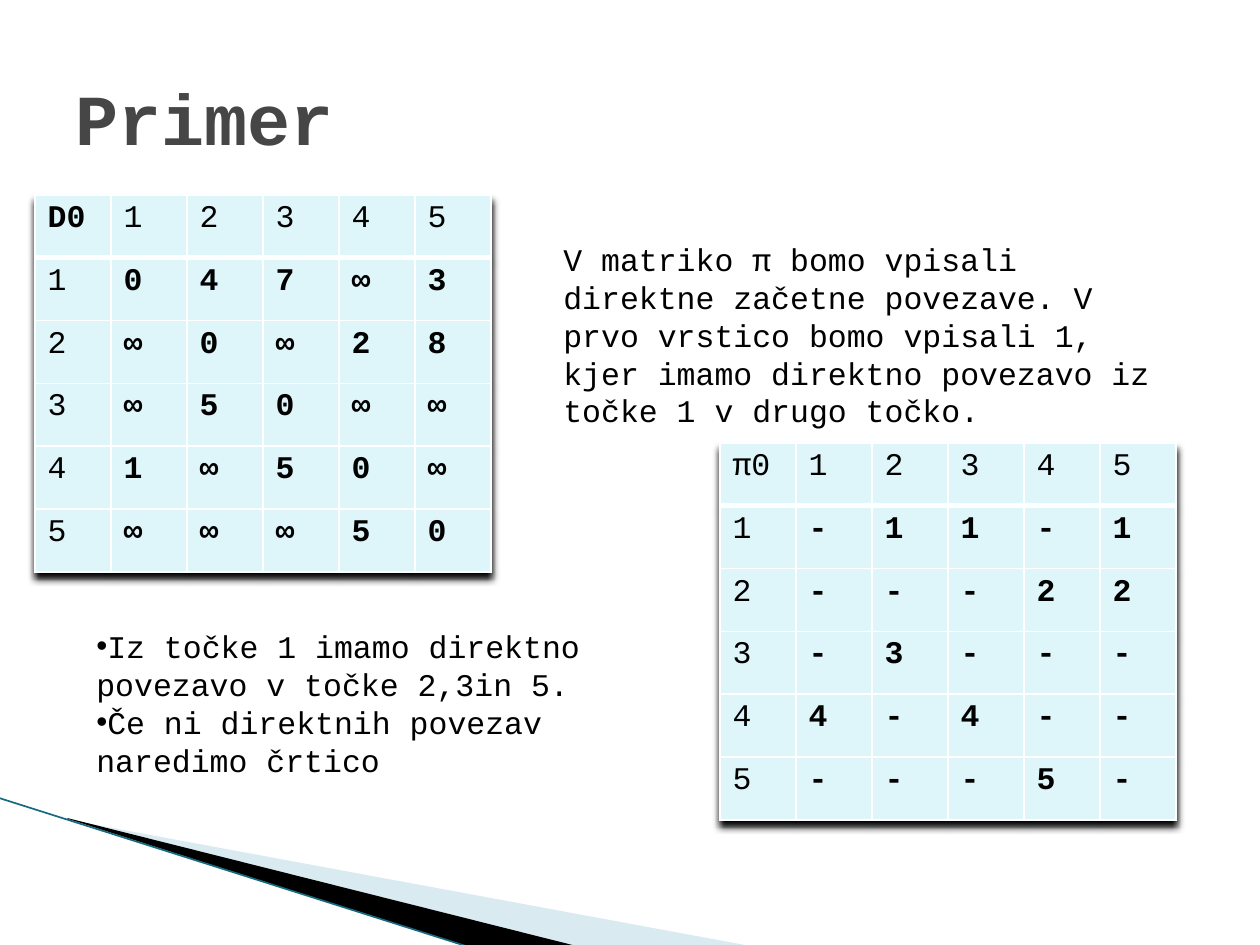
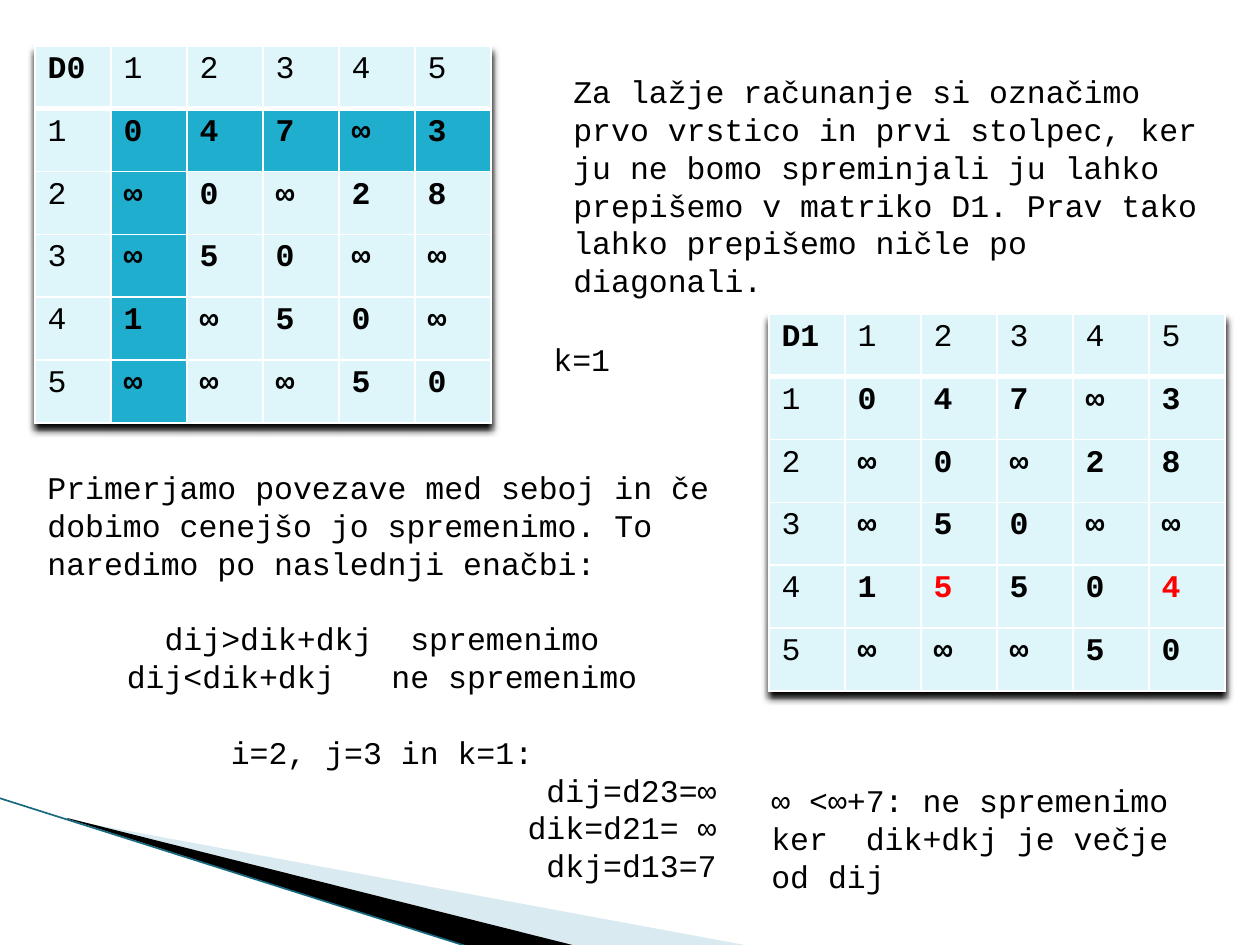
from lxml import etree
from pptx import Presentation
from pptx.dml.color import RGBColor
from pptx.enum.shapes import MSO_CONNECTOR
from pptx.enum.text import MSO_ANCHOR, PP_ALIGN
from pptx.oxml import parse_xml
from pptx.oxml.ns import nsdecls, qn
from pptx.util import Pt

PX = 914400 / 126
FONT = "Courier New"
BLACK, WHITE, RED = "000000", "FFFFFF", "FF0000"
TITLE_GREY, CELL, MARKED = "464646", "DEF5FA", "1FAECD"
PALE_BAND, EDGE = "A0CBDC", "17697F"
LEFT, CENTER, RIGHT = PP_ALIGN.LEFT, PP_ALIGN.CENTER, PP_ALIGN.RIGHT
LINE_GAP = 21.6    # one line of text, in points
CHARACTER = 1080   # width of one character, in hundredths of a point


def px(*lengths):
    return [round(length * PX) for length in lengths]


def add_run(paragraph, text, color=BLACK, size=18, bold=False, spacing=0):
    run = paragraph.add_run()
    run.text = text
    run.font.name, run.font.size, run.font.bold = FONT, Pt(size), bold
    run.font.color.rgb = RGBColor.from_string(color)
    if spacing:
        run.font._element.set("spc", str(spacing))


presentation = Presentation()
presentation.slide_width, presentation.slide_height = px(1260, 945)
TITLE_ONLY, BLANK = presentation.slide_layouts[5], presentation.slide_layouts[6]

# Bands: colour, opacity in percent, corners
bands = [
    (PALE_BAND, 40, [(69, 820), (750, 946), (575, 946), (69, 819)]),
    (BLACK, 100, [(67, 818), (576, 946), (469, 947), (68, 819)]),
]

distances = ["047∞3", "∞0∞28", "∞50∞∞", "1∞50∞", "∞∞∞50"]
distances_after_1 = distances[:3] + ["15504"] + distances[4:]
predecessors = ["-11-1", "---22", "-3---", "4-4--", "---5-"]
first_row_and_column = {(1, i) for i in range(1, 6)} | {(i, 1) for i in range(1, 6)}

# Tables: left, top, name, values, marked cells, changed cells
# Texts: left, top, width, height, bulleted, paragraphs;
# a paragraph: alignment, lines left free above, (text, extra characters of spacing) runs
slides = [
    {
        "title": "Primer",
        "tables": [
            (35, 195, "D0", distances, set(), set()),
            (720, 443, "π0", predecessors, set(), set()),
        ],
        "texts": [
            (551, 234, 615, 165, False, [
                (LEFT, 0, [("V matriko π bomo vpisali direktne začetne povezave. V prvo "
                            "vrstico bomo vpisali 1, kjer imamo direktno povezavo iz "
                            "točke 1 v drugo točko.", 0)]),
            ]),
            (84, 621, 595, 165, True, [
                (LEFT, 0, [("Iz točke 1 imamo direktno povezavo v točke 2,3in 5.", 0)]),
                (LEFT, 0, [("Če ni direktnih povezav naredimo črtico", 0)]),
            ]),
        ],
    },
    {
        "title": None,
        "tables": [
            (35, 46, "D0", distances, first_row_and_column, set()),
            (769, 314, "D1", distances_after_1, set(), {(4, 2), (4, 5)}),
        ],
        "texts": [
            (561, 66, 665, 204, False, [
                (LEFT, 0, [("Za lažje računanje si označimo prvo vrstico in prvi stolpec, "
                            "ker ju ne bomo spreminjali ju lahko prepišemo v matriko D1. "
                            "Prav tako lahko prepišemo ničle po diagonali.", 0)]),
            ]),
            (35, 462, 694, 471, False, [
                (LEFT, 0, [("Primerjamo povezave med seboj in če dobimo cenejšo jo "
                            "spremenimo. To naredimo po naslednji enačbi:", 0)]),
                (CENTER, 1, [("dij>dik+dkj", 0), (" ", 1), ("spremenimo", 0)]),
                (CENTER, 0, [("dij<dik+dkj", 0), (" ", 2), ("ne spremenimo", 0)]),
                (CENTER, 1, [("i=2, j=3 in k=1:", 0)]),
                (RIGHT, 0, [("dij=d23=∞", 0)]),
                (RIGHT, 0, [("dik=d21= ∞", 0)]),
                (RIGHT, 0, [("dkj=d13=7", 0)]),
            ]),
            (541, 334, 179, 50, False, [(LEFT, 0, [("k=1", 0)])]),
            (759, 775, 476, 90, False, [
                (LEFT, 0, [("∞ <∞+7: ne spremenimo ker", 0), (" ", 1),
                           ("dik+dkj je večje od dij", 0)]),
            ]),
        ],
    },
]

for content in slides:
    slide = presentation.slides.add_slide(TITLE_ONLY if content["title"] else BLANK)
    shapes = slide.shapes

    for color, opacity, corners in bands:
        builder = shapes.build_freeform(*corners[0], scale=PX)
        builder.add_line_segments(corners[1:], close=True)
        band = builder.convert_to_shape()
        band.shadow.inherit = False
        band.line.fill.background()
        band.fill.solid()
        band.fill.fore_color.rgb = RGBColor.from_string(color)
        if opacity < 100:
            fill_color = band._element.spPr.find(".//" + qn("a:srgbClr"))
            etree.SubElement(fill_color, qn("a:alpha"), val=str(opacity * 1000))
    edge = shapes.add_connector(MSO_CONNECTOR.STRAIGHT, *px(-1, 798, 469, 947))
    edge.line.color.rgb = RGBColor.from_string(EDGE)
    edge.line.width = Pt(0.95)
    etree.SubElement(edge._element.spPr, qn("a:effectLst"))

    if content["title"]:
        title = shapes.title
        title.left, title.top, title.width, title.height = px(63, 38, 1134, 157)
        title.text_frame.vertical_anchor = MSO_ANCHOR.MIDDLE
        paragraph = title.text_frame.paragraphs[0]
        paragraph.alignment = LEFT
        add_run(paragraph, content["title"], TITLE_GREY, 41, True)

    for left, top, name, values, marked, changed in content["tables"]:
        table = shapes.add_table(6, 6, *px(left, top, 456, 377)).table
        table._tbl.tblPr.insert(0, parse_xml(
            f'<a:effectLst {nsdecls("a")}><a:outerShdw blurRad="50800" dist="45000" '
            f'dir="5400000" rotWithShape="0"><a:srgbClr val="{BLACK}"/>'
            '</a:outerShdw></a:effectLst>'))
        for column in table.columns:
            column.width = px(76)[0]
        for row in table.rows:
            row.height = round(377 * PX / 6)
        grid = [[name, *"12345"]] + [[str(i), *line] for i, line in enumerate(values, 1)]
        for r, line in enumerate(grid):
            for c, text in enumerate(line):
                cell = table.cell(r, c)
                bold = (r > 0 and c > 0) or text.startswith("D")
                add_run(cell.text_frame.paragraphs[0], text,
                        RED if (r, c) in changed else BLACK, bold=bold)
                properties = cell._tc.get_or_add_tcPr()
                for side in "LRTB":
                    heavy = (r, side) in ((0, "B"), (1, "T"))
                    properties.append(parse_xml(
                        f'<a:ln{side} {nsdecls("a")} w="{Pt(3 if heavy else 1)}"><a:solidFill>'
                        f'<a:srgbClr val="{WHITE}"/></a:solidFill></a:ln{side}>'))
                cell.fill.solid()
                cell.fill.fore_color.rgb = RGBColor.from_string(
                    MARKED if (r, c) in marked else CELL)

    for left, top, width, height, bulleted, paragraphs in content["texts"]:
        frame = shapes.add_textbox(*px(left, top, width, height)).text_frame
        frame.word_wrap = True
        for number, (alignment, free_lines, runs) in enumerate(paragraphs):
            paragraph = frame.add_paragraph() if number else frame.paragraphs[0]
            paragraph.alignment = alignment
            if free_lines:
                paragraph.space_before = Pt(free_lines * LINE_GAP)
            if bulleted:
                bullet = paragraph._p.get_or_add_pPr()
                etree.SubElement(bullet, qn("a:buFont"), typeface="Arial")
                etree.SubElement(bullet, qn("a:buChar"), char="•")
            for text, extra in runs:
                add_run(paragraph, text, spacing=extra * CHARACTER)

presentation.save("out.pptx")
